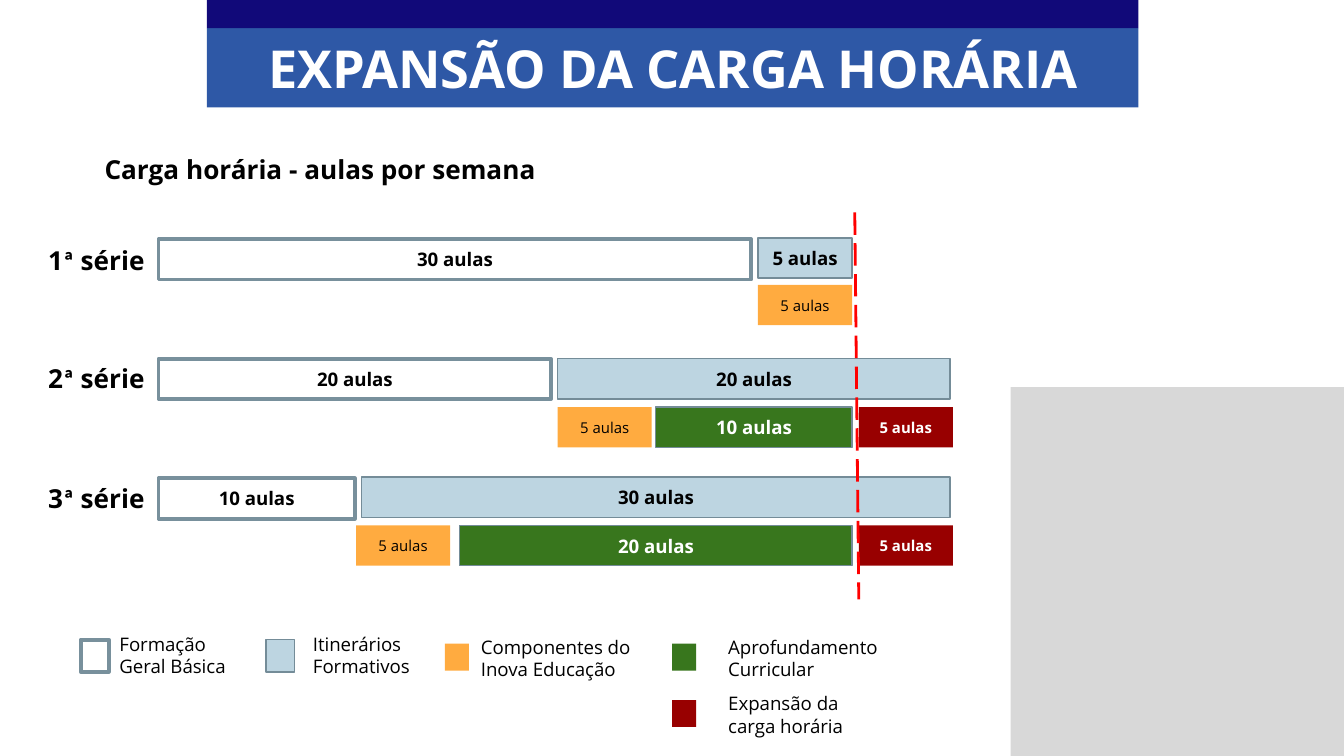
import pptx
import pptx.util
import pptx.dml.color
import pptx.enum.dml
import pptx.enum.shapes
import pptx.enum.text
import pptx.oxml.ns
import lxml.etree

Inches = pptx.util.Inches
Pt = pptx.util.Pt
ALIGN = pptx.enum.text.PP_ALIGN
ANCHOR = pptx.enum.text.MSO_ANCHOR

COLORS = {
    "white": "FFFFFF", "black": "000000", "frame": "78909C", "edge": "748C98",
    "navy": "110979", "blue": "2E58A6", "sky": "BDD5E1", "orange": "FFAB40",
    "green": "38761D", "wine": "980000", "gray": "BFBFBF", "red": "FF0000",
}

KINDS = {
    "basic": dict(fill="white", line="frame", width=2, size=10, bold=True),
    "paths": dict(fill="sky", line="edge", width=0.75, size=10, bold=True),
    "deepening": dict(fill="green", line="edge", width=0.75, size=10, bold=True, color="white"),
    "components": dict(fill="orange", size=8),
    "expansion": dict(fill="wine", size=8, bold=True, color="white"),
}

BARS = [
    ("basic", 1.18, 1.78, 4.41, 30),
    ("paths", 5.64, 1.77, 0.7, 5),
    ("components", 5.64, 2.12, 0.7, 5),
    ("basic", 1.18, 2.67, 2.92, 20),
    ("paths", 4.15, 2.67, 2.92, 20),
    ("components", 4.15, 3.03, 0.7, 5),
    ("deepening", 4.88, 3.03, 1.46, 10),
    ("expansion", 6.39, 3.03, 0.7, 5),
    ("basic", 1.18, 3.56, 1.46, 10),
    ("paths", 2.69, 3.55, 4.38, 30),
    ("components", 2.65, 3.91, 0.7, 5),
    ("deepening", 3.42, 3.91, 2.92, 20),
    ("expansion", 6.39, 3.91, 0.7, 5),
]

LEGEND = [
    ("white", "frame", 2, (0.6, 4.76, 0.21, 0.24), (0.79, 4.66, 1.05, 0.42), "Formação\nGeral Básica"),
    ("sky", "edge", 0.75, (1.98, 4.76, 0.21, 0.24), (2.23, 4.66, 0.98, 0.42), "Itinerários Formativos"),
    ("orange", None, 0, (3.31, 4.79, 0.18, 0.2), (3.48, 4.68, 1.38, 0.42), "Componentes do Inova Educação"),
    ("green", None, 0, (5, 4.79, 0.18, 0.2), (5.32, 4.68, 1.38, 0.42), "Aprofundamento Curricular"),
    ("wine", None, 0, (5, 5.21, 0.18, 0.2), (5.32, 5.1, 1.38, 0.42), "Expansão da carga horária"),
]


class SlideBuilder:
    font = "Open Sans"

    def __init__(self, slide):
        self.slide = slide
        self.shapes = slide.shapes

    def rgb(self, name):
        return pptx.dml.color.RGBColor.from_string(COLORS[name])

    def style_span(self, span, size, color="black", bold=False):
        span.font.name = self.font
        span.font.size = Pt(size)
        span.font.bold = bold
        span.font.color.rgb = self.rgb(color)

    def style_frame(self, frame, size, color="black", bold=False, align=ALIGN.LEFT,
                    anchor=ANCHOR.TOP, inset=0.05):
        frame.word_wrap = True
        frame.auto_size = pptx.enum.text.MSO_AUTO_SIZE.NONE
        frame.vertical_anchor = anchor
        frame.margin_left = frame.margin_right = Inches(0.1)
        frame.margin_top = frame.margin_bottom = Inches(inset)
        for para in frame.paragraphs:
            para.alignment = align
            for span in para.runs:
                self.style_span(span, size, color, bold)

    def title(self, text, area):
        box = self.shapes.title
        box.left, box.top, box.width, box.height = map(Inches, area)
        box.text_frame.text = text
        self.style_frame(box.text_frame, 28, "white", True, ALIGN.CENTER)
        self.shapes._spTree.append(box._element)

    def rectangle(self, area, fill, line=None, width=0, alpha=None):
        box = self.shapes.add_shape(pptx.enum.shapes.MSO_SHAPE.RECTANGLE, *map(Inches, area))
        box.shadow.inherit = False
        box.fill.solid()
        box.fill.fore_color.rgb = self.rgb(fill)
        if line:
            box.line.color.rgb = self.rgb(line)
            box.line.width = Pt(width)
        else:
            box.line.fill.background()
        if alpha:
            color = box._element.spPr.find(".//" + pptx.oxml.ns.qn("a:srgbClr"))
            lxml.etree.SubElement(color, pptx.oxml.ns.qn("a:alpha"), val=str(alpha * 1000))
        return box

    def bar(self, area, lessons, fill, size, line=None, width=0, color="black", bold=False):
        box = self.rectangle(area, fill, line, width)
        box.text_frame.text = f"{lessons} aulas"
        self.style_frame(box.text_frame, size, color, bold, ALIGN.CENTER, ANCHOR.MIDDLE)

    def text(self, text, area, size, bold=False, inset=0.05):
        box = self.shapes.add_textbox(*map(Inches, area))
        box.text_frame.text = text
        self.style_frame(box.text_frame, size, bold=bold, inset=inset)
        return box

    def grade_label(self, number, top):
        box = self.text(str(number), (0.26, top, 1.07, 0.44), 14, True, 0.1)
        para = box.text_frame.paragraphs[0]
        for part in ("ª", " série"):
            span = para.add_run()
            span.text = part
            self.style_span(span, 14, bold=True)
        para.runs[1].font.name = "Calibri"

    def dashed_line(self, start, end, color, width):
        line = self.shapes.add_connector(
            pptx.enum.shapes.MSO_CONNECTOR.STRAIGHT, *map(Inches, start + end))
        line.line.color.rgb = self.rgb(color)
        line.line.width = Pt(width)
        line.line.dash_style = pptx.enum.dml.MSO_LINE.LONG_DASH
        lxml.etree.SubElement(line._element.spPr, pptx.oxml.ns.qn("a:effectLst"))


def main():
    deck = pptx.Presentation()
    deck.slide_width = Inches(10)
    deck.slide_height = deck.slide_width * 9 // 16
    page = SlideBuilder(deck.slides.add_slide(deck.slide_layouts[5]))

    page.rectangle((1.54, 0.21, 6.93, 0.59), "blue")
    page.rectangle((1.54, 0, 6.93, 0.21), "navy")
    page.title("EXPANSÃO DA CARGA HORÁRIA", (1.54, 0.22, 6.93, 0.57))
    page.text("Carga horária - aulas por semana", (0.68, 1.04, 7.53, 0.44), 14, True, 0.1)

    for number, top in enumerate((1.72, 2.6, 3.49), start=1):
        page.grade_label(number, top)
    for kind, left, top, width, lessons in BARS:
        page.bar((left, top, width, 0.3), lessons, **KINDS[kind])
    for fill, line, width, swatch, area, text in LEGEND:
        page.rectangle(swatch, fill, line, width)
        page.text(text, area, 10)

    page.rectangle((7.52, 2.88, 2.48, 2.81), "gray", alpha=60)
    page.dashed_line((6.36, 1.58), (6.39, 4.46), "red", 1.5)
    deck.save("out.pptx")


if __name__ == "__main__":
    main()
